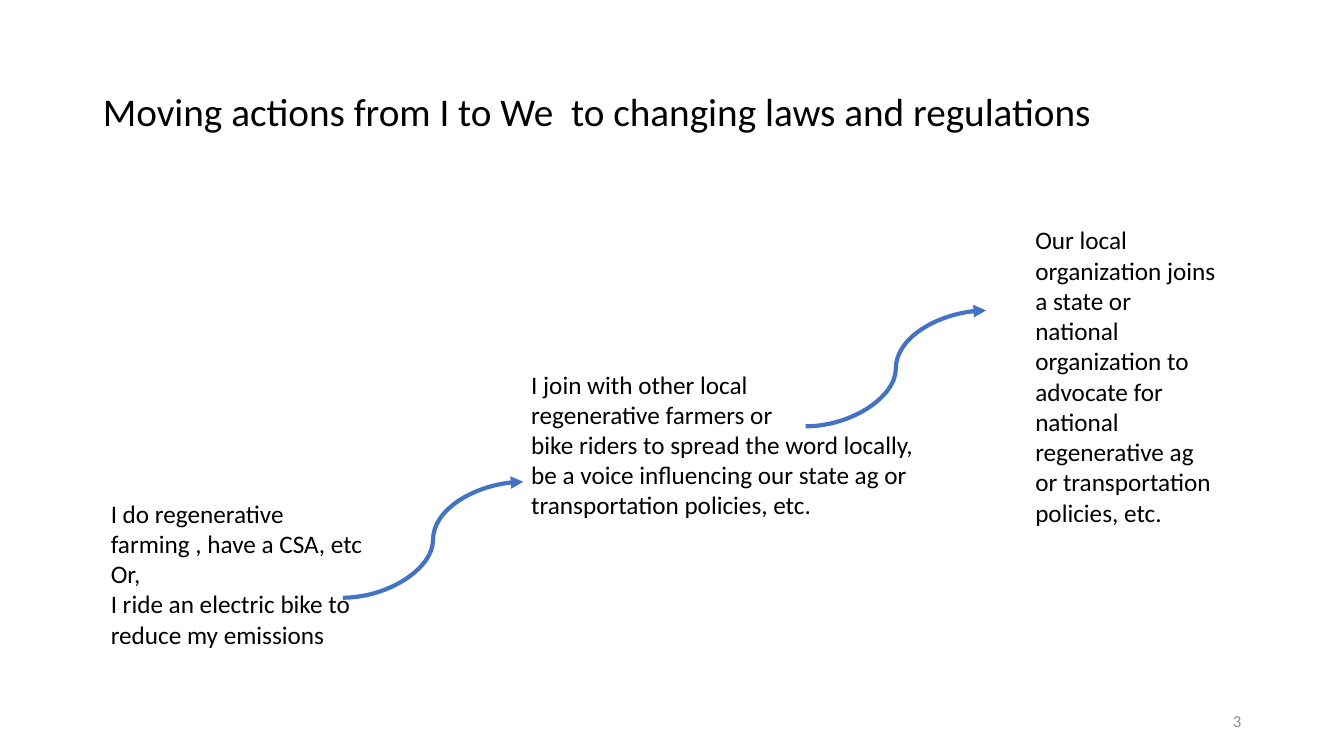
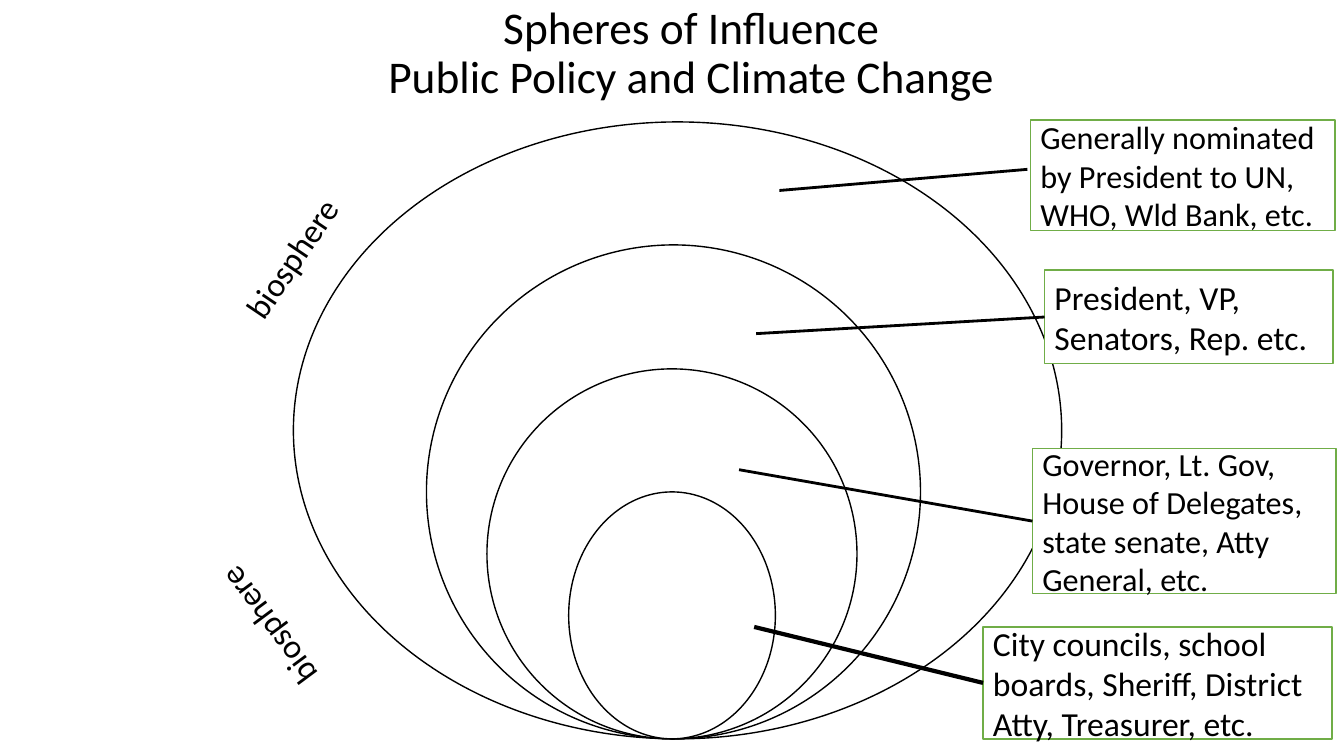
from dataclasses import dataclass

from lxml.etree import SubElement
from pptx import Presentation
from pptx.dml.color import RGBColor
from pptx.enum.shapes import MSO_CONNECTOR, MSO_SHAPE
from pptx.enum.text import MSO_ANCHOR, MSO_AUTO_SIZE, PP_ALIGN
from pptx.oxml.ns import qn
from pptx.util import Pt

# Shared look: 100 px to the inch
SCALE = 9144
FONT = "Calibri"
COLORS = {
    "ink": "000000",
    "paper": "FFFFFF",
    "arrow": "4472C4",
    "border": "70AD47",
    "number": "8C8C8C",
}


@dataclass(frozen=True)
class Box:
    left: int
    top: int
    width: int
    height: int


@dataclass(frozen=True)
class Note:
    text: str
    box: Box
    size: int = 18
    wrap: bool = True
    turn: float = 0


@dataclass(frozen=True)
class Ring:
    left: int
    width: int
    height: int


@dataclass(frozen=True)
class Line:
    start: tuple[int, int]
    end: tuple[int, int]
    weight: int = 2


@dataclass(frozen=True)
class Label:
    text: str
    box: Box
    size: int
    line: Line
    joined: bool = True


# Slide 1: three steps and the arrows between them
STEPS = [
    Note("I do regenerative\nfarming , have a CSA, etc\nOr,\n"
         "I ride an electric bike to\nreduce my emissions",
         Box(100, 489, 279, 162), wrap=False),
    Note("I join with other local\nregenerative farmers or\n"
         "bike riders to spread the word locally,\n"
         "be a voice influencing our state ag or\ntransportation policies, etc.",
         Box(517, 361, 409, 162), wrap=False),
    Note("Our local organization joins a state or national organization to "
         "advocate for national regenerative ag or transportation policies, etc.",
         Box(1017, 218, 203, 313)),
]
STARTS = [(340, 593), (799, 423)]
RUN, RISE = 179, 115

# Slide 2: nested rings on one base, and their labels
BASE = 733
RINGS = [Ring(291, 762, 612), Ring(423, 490, 490), Ring(483, 367, 367), Ring(564, 205, 245)]
LABELS = [
    Label("City councils, school boards, Sheriff, District Atty, Treasurer, etc.",
          Box(975, 622, 346, 111), 24, Line((748, 622), (975, 678), 3)),
    Label("Governor, Lt. Gov, House of Delegates, state senate, Atty General, etc.",
          Box(1024, 445, 301, 144), 23, Line((733, 466), (1024, 517))),
    Label("President, VP, Senators, Rep. etc.",
          Box(1036, 268, 286, 93), 24, Line((750, 331), (1036, 314))),
    Label("Generally nominated by President to UN, WHO, Wld Bank, etc.",
          Box(1022, 119, 302, 110), 23, Line((773, 189), (1019, 168)), joined=False),
]
SIDES = [
    Note("biosphere", Box(208, 231, 158, 44), 24, turn=304),
    Note("biosphere", Box(183, 600, 158, 44), 24, turn=233.4),
]


def px(*values: int) -> list[int]:
    return [value * SCALE for value in values]


def place(box: Box) -> list[int]:
    return px(box.left, box.top, box.width, box.height)


def tint(name: str) -> RGBColor:
    return RGBColor.from_string(COLORS[name])


def style(frame, size: float, color: str = "ink", align=PP_ALIGN.LEFT) -> None:
    for para in frame.paragraphs:
        para.alignment = align
        for run in para.runs:
            run.font.name = FONT
            run.font.size = Pt(size)
            run.font.color.rgb = tint(color)


def add_title(slide, text: str, box: Box, size: float, align, anchor) -> None:
    title = slide.shapes.title
    title.left, title.top, title.width, title.height = place(box)
    frame = title.text_frame
    frame.text = text
    frame.auto_size = MSO_AUTO_SIZE.NONE
    frame.vertical_anchor = anchor
    style(frame, size, align=align)
    frame.paragraphs[0].line_spacing = 0.9


def add_note(slide, note: Note) -> None:
    shape = slide.shapes.add_textbox(*place(note.box))
    shape.rotation = note.turn
    frame = shape.text_frame
    frame.word_wrap = note.wrap
    frame.auto_size = MSO_AUTO_SIZE.SHAPE_TO_FIT_TEXT
    frame.text = note.text
    style(frame, note.size)


def add_number(slide, text: str) -> None:
    frame = slide.shapes.add_textbox(*px(941, 695, 300, 40)).text_frame
    frame.word_wrap = True
    frame.vertical_anchor = MSO_ANCHOR.MIDDLE
    frame.text = text
    style(frame, 12, "number", PP_ALIGN.RIGHT)


def add_line(slide, line: Line, color: str = "ink", kind=MSO_CONNECTOR.STRAIGHT):
    link = slide.shapes.add_connector(kind, *px(*line.start, *line.end))
    link.line.color.rgb = tint(color)
    link.line.width = Pt(line.weight)
    SubElement(link._element.spPr, qn("a:effectLst"))
    return link


def add_arrow(slide, start: tuple[int, int]) -> None:
    end = (start[0] + RUN, start[1] - RISE)
    link = add_line(slide, Line(start, end, 3), "arrow", MSO_CONNECTOR.CURVE)
    SubElement(link.line._get_or_add_ln(), qn("a:tailEnd"), type="triangle")


def add_shape(shapes, kind, box: Box, border: str):
    shape = shapes.add_shape(kind, *place(box))
    shape.shadow.inherit = False
    shape.fill.solid()
    shape.fill.fore_color.rgb = tint("paper")
    shape.line.color.rgb = tint(border)
    shape.line.width = Pt(1)
    return shape


def add_label(slide, label: Label) -> None:
    shape = add_shape(slide.shapes, MSO_SHAPE.RECTANGLE, label.box, "border")
    frame = shape.text_frame
    frame.word_wrap = True
    frame.vertical_anchor = MSO_ANCHOR.MIDDLE
    frame.text = label.text
    style(frame, label.size)
    link = add_line(slide, label.line)
    if label.joined:
        link.end_connect(shape, 1)


def build_steps(slide) -> None:
    add_title(slide, "Moving actions from I to We  to changing laws and regulations",
              Box(92, 40, 1150, 145), 28, PP_ALIGN.LEFT, MSO_ANCHOR.MIDDLE)
    add_number(slide, "3")
    for note in STEPS:
        add_note(slide, note)
    for start in STARTS:
        add_arrow(slide, start)


def build_rings(slide) -> None:
    add_title(slide, "Spheres of Influence\vPublic Policy and Climate Change",
              Box(128, 0, 1115, 120), 32.4, PP_ALIGN.CENTER, MSO_ANCHOR.TOP)
    group = slide.shapes.add_group_shape()
    for ring in RINGS:
        box = Box(ring.left, BASE - ring.height, ring.width, ring.height)
        add_shape(group.shapes, MSO_SHAPE.OVAL, box, "ink")
    for label in LABELS:
        add_label(slide, label)
    for note in SIDES:
        add_note(slide, note)


def main() -> None:
    deck = Presentation()
    deck.slide_width, deck.slide_height = px(1333, 750)
    layout = deck.slide_layouts.get_by_name("Title Only")
    for build in (build_steps, build_rings):
        build(deck.slides.add_slide(layout))
    deck.save("out.pptx")


if __name__ == "__main__":
    main()
